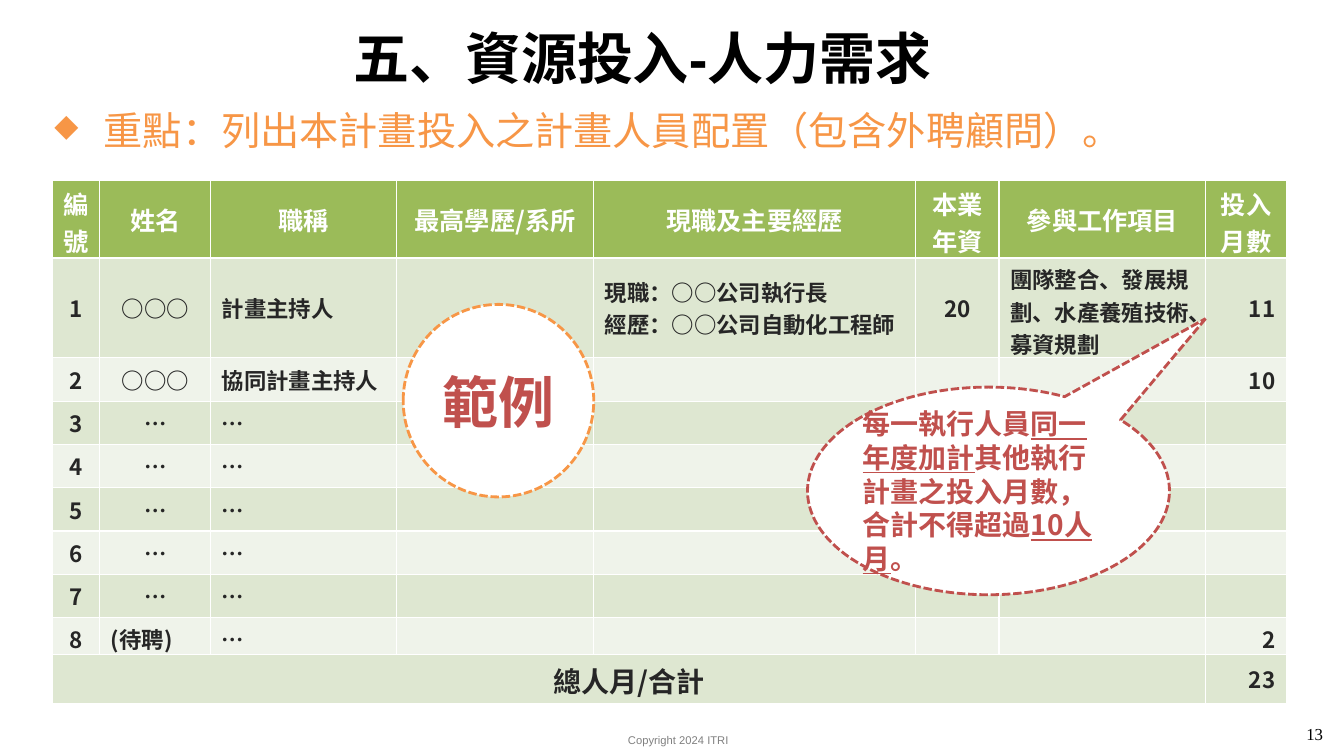
import lxml.etree
import pptx
import pptx.dml.color
import pptx.enum.dml
import pptx.enum.shapes
import pptx.enum.text
import pptx.oxml.ns
import pptx.util

WIDE, HIGH = 13.33, 7.5
SANS = "Noto Sans CJK SC"
WHITE, GREEN, ORANGE, RED, DARK = "FFFFFF", "9BBB59", "F79646", "C0504D", "262626"
BANDS = ("EFF3EA", "DEE7D1")
ALIGN = pptx.enum.text.PP_ALIGN
ANCHOR = pptx.enum.text.MSO_ANCHOR
SHAPE = pptx.enum.shapes.MSO_SHAPE

# Column widths and row heights, in percent of the slide
COLS = (3.53, 8.25, 13.8, 14.7, 23.93, 6.23, 15.38, 6)
ROWS = (10.27, 13.2) + (5.73,) * 6 + (4.93, 6.4)
SIDES = (ALIGN.CENTER, ALIGN.CENTER, ALIGN.LEFT, ALIGN.LEFT,
         ALIGN.LEFT, ALIGN.CENTER, ALIGN.LEFT, ALIGN.RIGHT)
HEADS = ("編號", "姓名", "職稱", "最高學歷/系所", "現職及主要經歷",
         "本業年資", "參與工作項目", "投入月數")
STAFF = [
    ("1", "○○○", "計畫主持人", "", "現職：○○公司執行長\n經歷：○○公司自動化工程師",
     "20", "團隊整合、發展規劃、水產養殖技術、募資規劃", "11"),
    ("2", "○○○", "協同計畫主持人", "", "", "", "", "10"),
    *[(str(n), "…", "…", "", "", "", "", "") for n in range(3, 8)],
    ("8", "(待聘)", "…", "", "", "", "", "2"),
    ("總人月/合計", "", "", "", "", "", "", "23"),
]


def tint(code):
    return pptx.dml.color.RGBColor.from_string(code)


def across(share):
    return pptx.util.Inches(WIDE * share / 100)


def down(share):
    return pptx.util.Inches(HIGH * share / 100)


def area(left, top, width, height):
    return across(left), down(top), across(width), down(height)


def tag(parent, name, **attrs):
    return lxml.etree.SubElement(parent, pptx.oxml.ns.qn(name), **attrs)


def write(frame, text, size=16, color=DARK, font=SANS, bold=False,
          align=ALIGN.LEFT, lead=None, space=None, bullet=None):
    """Each line is a paragraph; text between underscores is underlined."""
    for num, line in enumerate(text.split("\n")):
        para = frame.add_paragraph() if num else frame.paragraphs[0]
        para.alignment = align
        if lead:
            para.line_spacing = lead
        if space:
            para.space_after = pptx.util.Pt(space)
        if bullet:
            props = para._p.get_or_add_pPr()
            hang = pptx.util.Inches(0.49)
            props.set("marL", str(hang))
            props.set("indent", str(-hang))
            tag(props, "a:buSzPct", val="80000")
            tag(props, "a:buChar", char=bullet)
        if not line:
            tag(para._p, "a:endParaRPr", sz=str(size * 100))
            continue
        for part, words in enumerate(line.split("_")):
            run = para.add_run()
            run.text = words
            run.font.size = pptx.util.Pt(size)
            run.font.bold = bold
            run.font.name = font
            run.font.color.rgb = tint(color)
            if part % 2:
                run.font.underline = True
            tag(run._r.get_or_add_rPr(), "a:ea", typeface=SANS)


def inset(item, side, edge):
    item.margin_left = item.margin_right = pptx.util.Inches(side)
    item.margin_top = item.margin_bottom = pptx.util.Inches(edge)


def label(slide, place, text, wrap=True, tight=False, **style):
    frame = slide.shapes.add_textbox(*area(*place)).text_frame
    frame.word_wrap = wrap
    if tight:
        inset(frame, 0.02, 0.01)
    write(frame, text, **style)


def bubble(slide, kind, place, edge, text, **style):
    shape = slide.shapes.add_shape(kind, *area(*place))
    shape.shadow.inherit = False
    shape.fill.solid()
    shape.fill.fore_color.rgb = tint(WHITE)
    shape.line.color.rgb = tint(edge)
    shape.line.width = pptx.util.Pt(2)
    shape.line.dash_style = pptx.enum.dml.MSO_LINE.SQUARE_DOT
    frame = shape.text_frame
    frame.word_wrap = True
    frame.vertical_anchor = ANCHOR.MIDDLE
    inset(frame, 0.02, 0.01)
    write(frame, text, color=RED, bold=True, **style)
    return shape


def roster(slide):
    place = area(3.9, 23.87, sum(COLS), sum(ROWS))
    table = slide.shapes.add_table(len(ROWS), len(COLS), *place).table
    for col, share in zip(table.columns, COLS):
        col.width = across(share)
    for row, share in zip(table.rows, ROWS):
        row.height = down(share)
    last = len(ROWS) - 1
    table.cell(last, 0).merge(table.cell(last, len(COLS) - 2))
    for r, line in enumerate([HEADS] + STAFF):
        for c, text in enumerate(line):
            cell = table.cell(r, c)
            cell.vertical_anchor = ANCHOR.MIDDLE
            cell.fill.solid()
            cell.fill.fore_color.rgb = tint(BANDS[r % 2] if r else GREEN)
            if r and c:
                inset(cell, 0.11, 0.05)
            style = {"align": SIDES[c]}
            if r == 0:
                style = {"align": ALIGN.CENTER, "size": 18, "color": WHITE}
            elif r == last and c == 0:
                style["size"] = 20
            elif text == "(待聘)":
                style["align"] = ALIGN.LEFT
            write(cell.text_frame, text, bold=True, **style)


def main():
    deck = pptx.Presentation()
    deck.slide_width, deck.slide_height = across(100), down(100)
    slide = deck.slides.add_slide(deck.slide_layouts[5])

    # Title and key point
    title = slide.shapes.title
    title.left, title.top, title.width, title.height = area(13.58, 2, 68.42, 9.2)
    title.text_frame.vertical_anchor = ANCHOR.MIDDLE
    title.text_frame.auto_size = pptx.enum.text.MSO_AUTO_SIZE.NONE
    write(title.text_frame, "五、資源投入-人力需求", size=40, color="000000",
          font="Arial", bold=True, align=ALIGN.CENTER, lead=1.2)
    label(slide, (3.9, 13.87, 91, 7.33),
          "重點：列出本計畫投入之計畫人員配置（包含外聘顧問）。",
          size=28, color=ORANGE, space=2, bullet="◆", tight=True)

    # Staff table
    roster(slide)

    # Sample mark and remark
    bubble(slide, SHAPE.OVAL, (30, 40.27, 14.18, 25.47), ORANGE, "範例",
           size=40, align=ALIGN.CENTER)
    remark = bubble(
        slide, SHAPE.OVAL_CALLOUT, (60.09, 51.2, 26.93, 27.47), RED,
        "每一執行人員_同一年度加計_其他執行計畫之投入月數，合計不得超過_10人月_。",
        size=20)
    remark.adjustments[0], remark.adjustments[1] = 0.6, -0.83

    # Footer
    label(slide, (45.99, 96.4, 9.08, 3.2), "Copyright 2024 ITRI", wrap=False,
          size=8, color="808080", font="Arial")
    label(slide, (94.9, 95.07, 4.28, 4.4), "13", size=12, color="000000",
          font="Times New Roman", align=ALIGN.RIGHT)

    deck.save("out.pptx")


if __name__ == "__main__":
    main()
